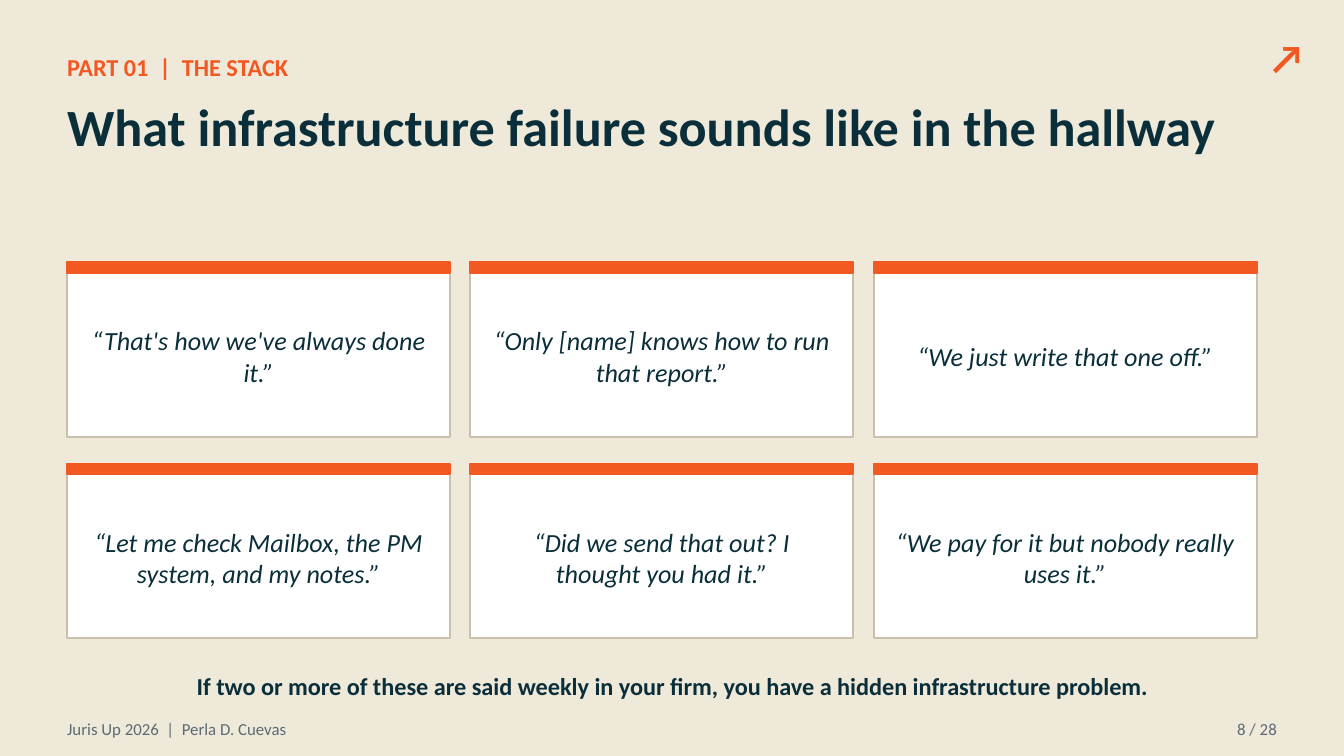
from pptx import Presentation
from pptx.dml.color import RGBColor
from pptx.enum.shapes import MSO_SHAPE
from pptx.enum.text import MSO_ANCHOR, PP_ALIGN
from pptx.util import Inches, Pt

PAPER, WHITE, BORDER = "EFE9DA", "FFFFFF", "C9C0AB"
ORANGE, NAVY, GREY = "F25822", "0A2F3A", "5C6B73"

QUOTES = [
    "“That's how we've always done it.”",
    "“Only [name] knows how to run that report.”",
    "“We just write that one off.”",
    "“Let me check Mailbox, the PM system, and my notes.”",
    "“Did we send that out? I thought you had it.”",
    "“We pay for it but nobody really uses it.”",
]


def color(hex_value):
    return RGBColor.from_string(hex_value)


class Deck:
    font = "Calibri"
    column = Inches(0.5)
    row = Inches(0.05)

    def __init__(self):
        self.presentation = Presentation()
        self.presentation.slide_width = Inches(10)
        self.presentation.slide_height = Inches(10) * 9 // 16
        self.slide = self.presentation.slides.add_slide(self.presentation.slide_layouts[6])
        background = self.slide.background.fill
        background.solid()
        background.fore_color.rgb = color(PAPER)

    def place(self, left, top, width, height):
        return (round(left * self.column), round(top * self.row),
                round(width * self.column), round(height * self.row))

    def text(self, box, wording, size, ink, align=PP_ALIGN.LEFT,
             anchor=MSO_ANCHOR.MIDDLE, bold=False, italic=False):
        frame = self.slide.shapes.add_textbox(*self.place(*box)).text_frame
        frame.word_wrap = True
        frame.vertical_anchor = anchor
        frame.margin_left = frame.margin_right = 0
        frame.margin_top = frame.margin_bottom = 0
        frame.text = wording
        paragraph = frame.paragraphs[0]
        paragraph.alignment = align
        font = paragraph.runs[0].font
        font.name, font.size = self.font, Pt(size)
        font.bold, font.italic = bold, italic
        font.color.rgb = color(ink)

    def rectangle(self, box, fill, line):
        panel = self.slide.shapes.add_shape(MSO_SHAPE.RECTANGLE, *self.place(*box))
        panel.shadow.inherit = False
        panel.fill.solid()
        panel.fill.fore_color.rgb = color(fill)
        panel.line.color.rgb = color(line)
        panel.line.width = Pt(1)

    def quote_card(self, left, top, quote):
        self.rectangle((left, top, 5.7, 26), WHITE, BORDER)
        self.rectangle((left, top, 5.7, 1.6), ORANGE, ORANGE)
        self.text((left + 0.3, top + 4, 5.1, 20), quote, 14, NAVY,
                  PP_ALIGN.CENTER, italic=True)


def main():
    deck = Deck()
    deck.text((18.6, 3, 1.1, 11), "↗", 22, ORANGE, PP_ALIGN.CENTER, bold=True)
    deck.text((1, 7, 12, 6), "PART 01  |  THE STACK", 13, ORANGE, bold=True)
    deck.text((1, 14, 18, 18), "What infrastructure failure sounds like in the hallway",
              28, NAVY, anchor=MSO_ANCHOR.TOP, bold=True)

    for index, quote in enumerate(QUOTES):
        card_row, card_column = divmod(index, 3)
        deck.quote_card(1 + 6 * card_column, 39 + 30 * card_row, quote)

    deck.text((1, 99, 18, 6),
              "If two or more of these are said weekly in your firm, "
              "you have a hidden infrastructure problem.",
              13, NAVY, PP_ALIGN.CENTER, bold=True)
    deck.text((1, 106, 12, 5), "Juris Up 2026  |  Perla D. Cuevas", 9, GREY)
    deck.text((17.2, 106, 1.8, 5), "8 / 28", 9, GREY, PP_ALIGN.RIGHT)
    deck.presentation.save("out.pptx")


if __name__ == "__main__":
    main()
